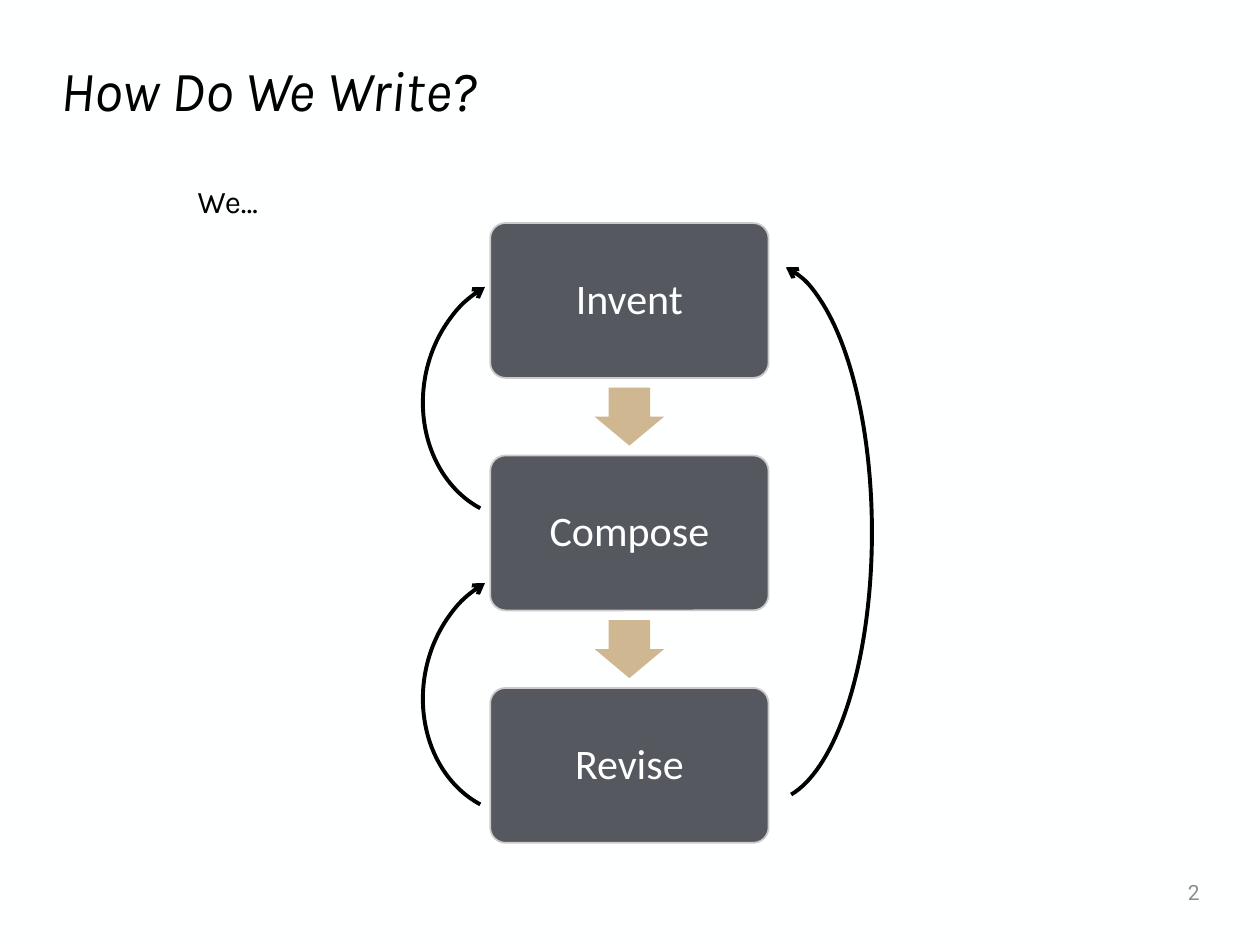
from lxml import etree
from pptx import Presentation
from pptx.dml.color import RGBColor
from pptx.enum.shapes import MSO_SHAPE
from pptx.enum.text import MSO_ANCHOR, PP_ALIGN
from pptx.oxml.ns import qn
from pptx.util import Inches, Pt

ROUND, DOWN, ARC = MSO_SHAPE.ROUNDED_RECTANGLE, MSO_SHAPE.DOWN_ARROW, MSO_SHAPE.ARC
TOP, MIDDLE = MSO_ANCHOR.TOP, MSO_ANCHOR.MIDDLE
LEFT, CENTER, RIGHT = PP_ALIGN.LEFT, PP_ALIGN.CENTER, PP_ALIGN.RIGHT

BLACK, WHITE, GRAY = "000000", "FEFFFF", "8C8C8C"
SLATE, EDGE, TAN = "55585F", "CECACB", "CFB891"
STEPS = ["Invent", "Compose", "Revise"]


def paint(fill, color):
    fill.solid()
    fill.fore_color.rgb = RGBColor.from_string(color)


def write(shape, text, size, font, color=BLACK, italic=False, align=LEFT,
          anchor=MIDDLE, spacing=0.9):
    frame = shape.text_frame
    frame.word_wrap = True
    frame.vertical_anchor = anchor
    para = frame.paragraphs[0]
    para.alignment = align
    para.line_spacing = spacing
    run = para.add_run()
    run.text = text
    run.font.size = Pt(size)
    run.font.name = font
    run.font.italic = italic
    run.font.color.rgb = RGBColor.from_string(color)


def add_text(slide, box, text, **style):
    write(slide.shapes.add_textbox(*map(Inches, box)), text, **style)


def add_shape(slide, kind, box, adjust, fill=None, line=None, width=1):
    shape = slide.shapes.add_shape(kind, *map(Inches, box))
    shape.shadow.inherit = False
    for i, value in enumerate(adjust):
        shape.adjustments[i] = value
    if fill:
        paint(shape.fill, fill)
    else:
        shape.fill.background()
    if line:
        paint(shape.line.fill, line)
        shape.line.width = Pt(width)
    else:
        shape.line.fill.background()
    return shape


def add_flow(slide, box):
    """Stack the steps evenly in the box, with a down arrow in each gap."""
    left, top, width, height = box
    tall = 1.23
    pitch = (height - tall) / (len(STEPS) - 1)
    wide, high = 0.55, 0.46
    for i, name in enumerate(STEPS):
        y = top + i * pitch
        step = add_shape(slide, ROUND, (left, y, width, tall), [0.1], SLATE, EDGE)
        write(step, name, size=24, font="Calibri", color=WHITE, align=CENTER)
        if i:
            gap = pitch - tall
            spot = (left + (width - wide) / 2, y - (gap + high) / 2, wide, high)
            add_shape(slide, DOWN, spot, [0.6, 0.5], TAN)


def add_loop(slide, box, adjust, end, turn=0):
    """Draw an arc with an arrowhead at its headEnd or tailEnd."""
    arc = add_shape(slide, ARC, box, adjust, line=BLACK, width=2.25)
    arc.rotation = turn
    line = arc.line._get_or_add_ln()
    etree.SubElement(line, qn("a:" + end), type="arrow")


def main():
    deck = Presentation()
    deck.slide_width, deck.slide_height = Inches(10), Inches(7.5)
    slide = deck.slides.add_slide(deck.slide_layouts[6])
    paint(slide.background.fill, WHITE)

    add_text(slide, (0.38, 0.42, 9.24, 0.64), "How Do We Write?",
             size=32.4, font="Karla", italic=True)
    add_text(slide, (8.42, 6.88, 1.2, 0.4), "2",
             size=12, font="Roboto", color=GRAY, align=RIGHT, spacing=1.0)
    add_text(slide, (1.47, 1.43, 8.15, 0.4), "We…",
             size=18, font="Karla", anchor=TOP)

    add_flow(slide, (3.89, 1.77, 2.21, 4.92))
    add_loop(slide, (5.27, 2.09, 1.65, 4.27), [164.31, 50.97], "headEnd")
    for top in (2.17, 4.52):
        add_loop(slide, (3.36, top, 1.65, 1.95), [170.32, 35.96], "tailEnd", 188.9)

    deck.save("out.pptx")


if __name__ == "__main__":
    main()
